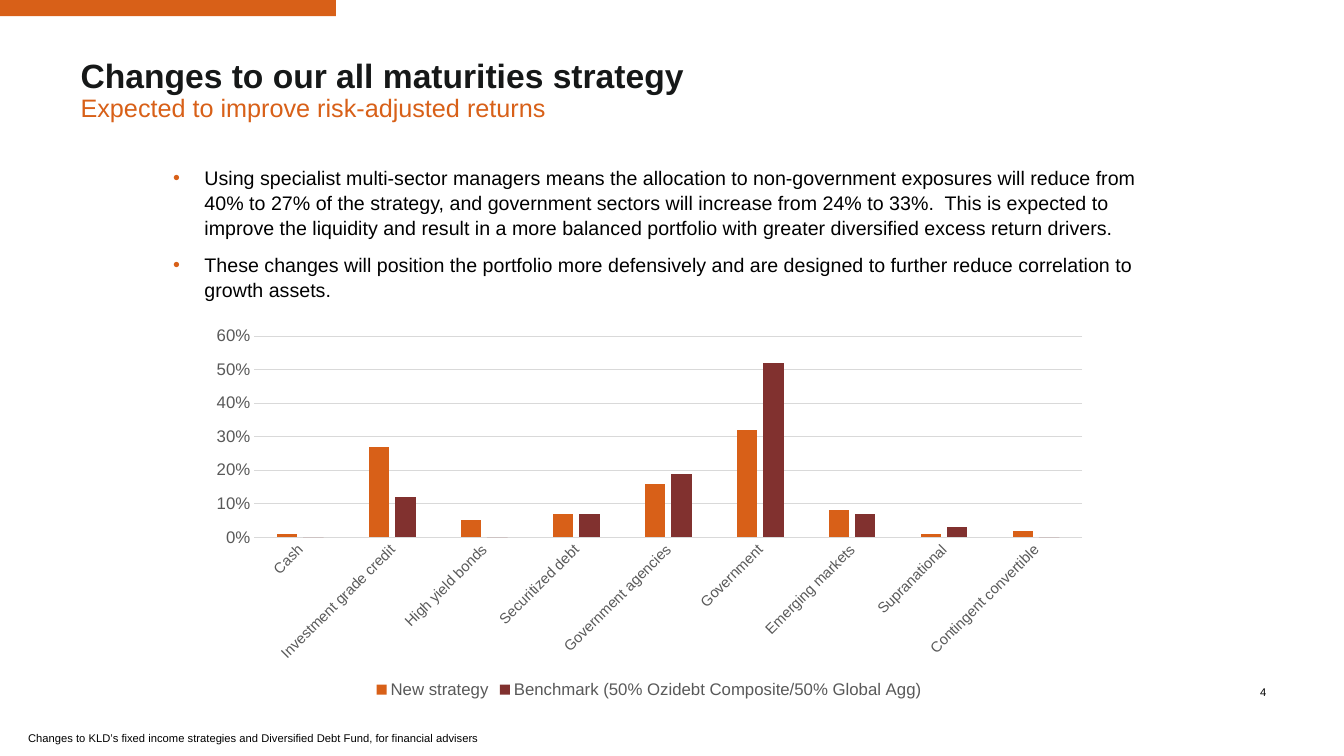
from dataclasses import dataclass

from lxml.etree import SubElement
from pptx import Presentation
from pptx.chart.data import CategoryChartData as ChartData
from pptx.dml.color import RGBColor
from pptx.enum.chart import XL_CHART_TYPE as ChartType
from pptx.enum.chart import XL_LEGEND_POSITION as LegendPosition
from pptx.enum.chart import XL_TICK_MARK as TickMark
from pptx.enum.shapes import MSO_SHAPE as Preset
from pptx.enum.text import MSO_ANCHOR as Anchor
from pptx.enum.text import MSO_AUTO_SIZE as AutoSize
from pptx.enum.text import PP_ALIGN as Align
from pptx.oxml.ns import qn
from pptx.util import Inches, Pt


@dataclass(frozen=True)
class Theme:
    font: str = "Arial"
    accent: str = "D86018"
    maroon: str = "81312F"
    heading: str = "161818"
    text: str = "000000"
    muted: str = "595959"
    rule: str = "D9D9D9"
    paper: str = "FFFFFF"
    title_size: float = 24
    subtitle_size: float = 18
    body_size: float = 14
    chart_size: float = 12
    category_size: float = 10.5
    small_size: float = 8


@dataclass(frozen=True)
class Area:
    """Left, top, width and height in percent of the slide's size."""
    left: float
    top: float
    width: float
    height: float

    def lengths(self) -> tuple[int, ...]:
        return tuple(int(share * full / 100) for share, full in (
            (self.left, WIDTH), (self.top, HEIGHT),
            (self.width, WIDTH), (self.height, HEIGHT)))


@dataclass(frozen=True)
class Series:
    name: str
    color: str
    percents: tuple[int, ...]


THEME = Theme()
WIDTH, HEIGHT = Inches(13.33), Inches(7.5)

BAND = Area(0, 0, 25, 2.13)
TITLE = Area(6, 7.87, 69.17, 7.6)
BODY = Area(12.15, 21.07, 75.69, 24.8)
CHART = Area(14.78, 42.27, 67.07, 50.67)
NUMBER = Area(92.12, 90.13, 2.1, 2.8)
FOOTER = Area(1.35, 96.13, 37.5, 2.8)

BULLETS = (
    "Using specialist multi-sector managers means the allocation to non-government "
    "exposures will reduce from 40% to 27% of the strategy, and government sectors will "
    "increase from 24% to 33%.  This is expected to improve the liquidity and result in a "
    "more balanced portfolio with greater diversified excess return drivers.",
    "These changes will position the portfolio more defensively and are designed to "
    "further reduce correlation to growth assets.",
)
SECTORS = ("Cash", "Investment grade credit", "High yield bonds", "Securitized debt",
           "Government agencies", "Government", "Emerging markets", "Supranational",
           "Contingent convertible")
ALLOCATIONS = (
    Series("New strategy", THEME.accent, (1, 27, 5, 7, 16, 32, 8, 1, 2)),
    Series("Benchmark (50% Ozidebt Composite/50% Global Agg)", THEME.maroon,
           (0, 12, 0, 7, 19, 52, 7, 3, 0)),
)


def rgb(color: str) -> RGBColor:
    return RGBColor.from_string(color)


def style_font(font, size: float, color: str, bold: bool = False) -> None:
    font.name, font.size, font.bold = THEME.font, Pt(size), bold
    font.color.rgb = rgb(color)


def add_box(page, area: Area, inset: bool = True, wrap: bool = True):
    box = page.shapes.add_textbox(*area.lengths())
    frame = box.text_frame
    frame.word_wrap = wrap
    if not inset:
        frame.margin_left = frame.margin_right = 0
        frame.margin_top = frame.margin_bottom = 0
    return box


def add_text(box, text: str, *, size: float, color: str = THEME.text, bold: bool = False,
             align=None, spacing: float | None = None, after: float | None = None,
             bullet: bool = False) -> None:
    frame = box.text_frame
    para = frame.paragraphs[0] if not frame.text else frame.add_paragraph()
    para.alignment = align
    para.line_spacing = spacing
    if after is not None:
        para.space_after = Pt(after)
    if bullet:
        add_bullet(para)
    span = para.add_run()
    span.text = text
    style_font(span.font, size, color, bold)


def add_bullet(para) -> None:
    properties = para._p.get_or_add_pPr()
    indent = Inches(0.31)
    properties.set("marL", str(indent))
    properties.set("indent", str(-indent))
    tint = SubElement(properties, qn("a:buClr"))
    SubElement(tint, qn("a:srgbClr"), val=THEME.accent)
    SubElement(properties, qn("a:buFont"), typeface=THEME.font)
    SubElement(properties, qn("a:buChar"), char="•")


def add_band(page) -> None:
    band = page.shapes.add_shape(Preset.RECTANGLE, *BAND.lengths())
    band.shadow.inherit = False
    band.fill.solid()
    band.fill.fore_color.rgb = rgb(THEME.accent)
    band.line.fill.background()


def style_line(line, color: str) -> None:
    line.color.rgb = rgb(color)
    line.width = Pt(0.75)


def add_allocation_chart(page) -> None:
    data = ChartData(number_format="0%")
    data.categories = SECTORS
    for series in ALLOCATIONS:
        data.add_series(series.name, [percent / 100 for percent in series.percents])
    chart = page.shapes.add_chart(
        ChartType.COLUMN_CLUSTERED, *CHART.lengths(), data).chart
    style_font(chart.font, 10, THEME.text)
    chart.has_title = False

    # Columns
    plot = chart.plots[0]
    plot.gap_width, plot.overlap, plot.vary_by_categories = 219, -27, False
    for drawn, series in zip(plot.series, ALLOCATIONS):
        drawn.format.fill.solid()
        drawn.format.fill.fore_color.rgb = rgb(series.color)
        drawn.invert_if_negative = False

    # Axes
    sectors, shares = chart.category_axis, chart.value_axis
    for axis, size in ((sectors, THEME.category_size), (shares, THEME.chart_size)):
        axis.major_tick_mark = axis.minor_tick_mark = TickMark.NONE
        style_font(axis.tick_labels.font, size, THEME.muted)
    style_line(sectors.format.line, THEME.rule)
    sectors.tick_labels.font._element.getparent().getparent().getparent().find(
        qn("a:bodyPr")).set("rot", str(-45 * 60000))
    shares.minimum_scale, shares.maximum_scale, shares.major_unit = 0, 0.6, 0.1
    shares.tick_labels.number_format = "0%"
    shares.tick_labels.number_format_is_linked = False
    shares.format.line.fill.background()
    style_line(shares.major_gridlines.format.line, THEME.rule)

    # Legend
    chart.has_legend = True
    chart.legend.position = LegendPosition.BOTTOM
    chart.legend.include_in_layout = False
    style_font(chart.legend.font, THEME.chart_size, THEME.muted)


def main() -> None:
    deck = Presentation()
    deck.slide_width, deck.slide_height = WIDTH, HEIGHT
    page = deck.slides.add_slide(deck.slide_layouts[6])

    # Band and headings
    add_band(page)
    title = add_box(page, TITLE, inset=False)
    add_text(title, "Changes to our all maturities strategy", size=THEME.title_size,
             color=THEME.heading, bold=True, spacing=0.9)
    add_text(title, "Expected to improve risk-adjusted returns",
             size=THEME.subtitle_size, color=THEME.accent, spacing=0.9)

    # Key points
    body = add_box(page, BODY)
    body.fill.solid()
    body.fill.fore_color.rgb = rgb(THEME.paper)
    body.text_frame.auto_size = AutoSize.SHAPE_TO_FIT_TEXT
    for text in BULLETS:
        add_text(body, text, size=THEME.body_size, spacing=1.07, after=8, bullet=True)

    add_allocation_chart(page)

    # Footer and page number
    footer = add_box(page, FOOTER)
    add_text(footer, "Changes to KLD’s fixed income strategies and Diversified Debt Fund, "
             "for financial advisers", size=THEME.small_size)
    number = add_box(page, NUMBER, inset=False, wrap=False)
    number.text_frame.vertical_anchor = Anchor.MIDDLE
    add_text(number, "4", size=THEME.small_size, align=Align.RIGHT)

    deck.save("out.pptx")


if __name__ == "__main__":
    main()
